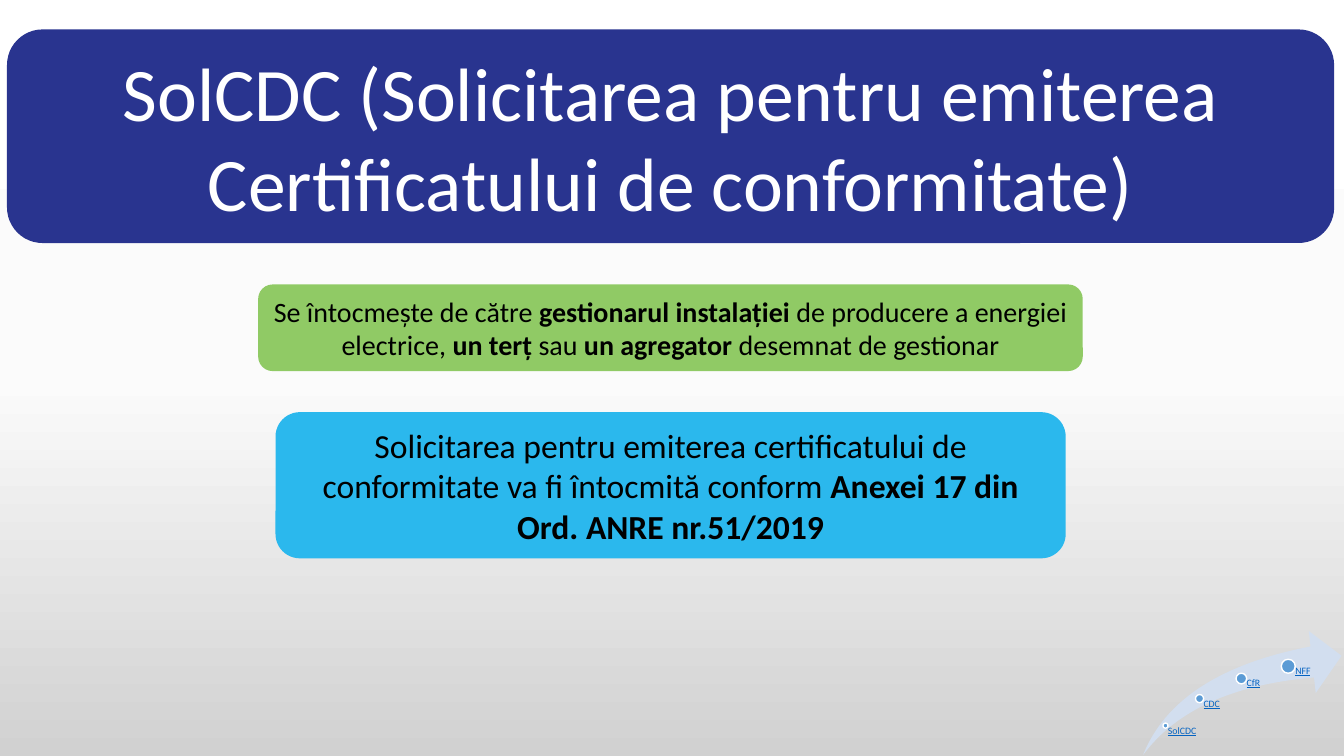
from copy import deepcopy

from pptx import Presentation
from pptx.dml.color import RGBColor
from pptx.enum.shapes import MSO_SHAPE
from pptx.enum.text import MSO_ANCHOR, MSO_AUTO_SIZE, PP_ALIGN
from pptx.util import Pt

COLORS = {
    "white": "FFFFFF", "pale": "FBFBFB", "gray": "D1D1D1", "black": "000000",
    "navy": "29348F", "sky": "2BB8ED", "green": "90CA65",
    "swoosh": "D2DEEF", "dot": "5B9BD5", "link": "0563C1",
}


class Deck:
    font = "Calibri"

    def __init__(self, wide, high):
        self.prs = Presentation()
        self.prs.slide_width, self.prs.slide_height = Pt(wide), Pt(high)
        self.slide = self.prs.slides.add_slide(self.prs.slide_layouts[6])

    def color(self, name):
        return RGBColor.from_string(COLORS[name])

    def backdrop(self, names):
        fill = self.slide.background.fill
        fill.gradient()
        fill.gradient_angle = 270
        first = fill.gradient_stops[0]._gs
        first.addnext(deepcopy(first))
        for i, (stop, name) in enumerate(zip(fill.gradient_stops, names)):
            stop.position = i / (len(names) - 1)
            stop.color.rgb = self.color(name)

    def shape(self, kind, box, fill, line=None, home=None):
        home = home or self.slide
        item = home.shapes.add_shape(kind, *map(Pt, box))
        item.shadow.inherit = False
        item.fill.solid()
        item.fill.fore_color.rgb = self.color(fill)
        if line:
            item.line.color.rgb = self.color(line)
            item.line.width = Pt(1)
        else:
            item.line.fill.background()
        return item

    def style(self, run, size, color):
        run.font.name = self.font
        run.font.size = Pt(size)
        run.font.color.rgb = self.color(color)

    def panel(self, box, fill, size, color, parts):
        """Rounded box; every second part of the text is bold."""
        frame = self.shape(MSO_SHAPE.ROUNDED_RECTANGLE, box, fill).text_frame
        frame.word_wrap = True
        frame.auto_size = MSO_AUTO_SIZE.SHAPE_TO_FIT_TEXT
        frame.vertical_anchor = MSO_ANCHOR.MIDDLE
        para = frame.paragraphs[0]
        para.alignment = PP_ALIGN.CENTER
        for i, part in enumerate(parts):
            run = para.add_run()
            run.text = part
            self.style(run, size, color)
            run.font.bold = i % 2 == 1

    def label(self, box, inset, text, home):
        frame = home.shapes.add_textbox(*map(Pt, box)).text_frame
        frame.word_wrap = True
        frame.margin_left = Pt(inset)
        frame.margin_top = frame.margin_right = frame.margin_bottom = 0
        frame.text = text
        para = frame.paragraphs[0]
        para.line_spacing = 0.9
        run = para.runs[0]
        self.style(run, 7, "link")
        run.font.underline = True

    def path_steps(self, box, steps):
        """Swoosh arrow with a dot and a label at each step."""
        group = self.slide.shapes.add_group_shape()
        arrow = self.shape(MSO_SHAPE.SWOOSH_ARROW, box, "swoosh", home=group)
        arrow.adjustments[0] = arrow.adjustments[1] = 0.25
        base = box[1] + box[3]
        for text, x, y, size, wide in steps:
            half = size / 2
            self.shape(MSO_SHAPE.OVAL, (x - half, y - half, size, size),
                       "dot", "white", group)
            self.label((x, y, wide, base - y), half, text, group)


def main():
    deck = Deck(960, 540)
    deck.backdrop(["white", "pale", "gray"])

    # Title and the two statements
    deck.panel((5, 21, 948, 152.6), "navy", 54, "white",
               ["SolCDC (Solicitarea pentru emiterea Certificatului de conformitate)"])
    deck.panel((196.8, 294.4, 564.4, 104.4), "sky", 24, "black",
               ["Solicitarea pentru emiterea certificatului de conformitate "
                "va fi întocmită conform ",
                "Anexei 17 din Ord. ANRE nr.51/2019"])
    deck.panel((184.4, 203.2, 589, 61.9), "green", 20, "black",
               ["Se întocmește de către ", "gestionarul instalației ",
                "de producere a energiei electrice, ", "un terț ",
                "sau ", "un agregator ", "desemnat de gestionar"])

    # Process path: label, dot centre, dot size, label width
    deck.path_steps((816.5, 450.7, 141.8, 88.6), [
        ("SolCDC", 832.5, 518.3, 3.6, 24.5),
        ("CDC", 856.8, 499, 5.8, 29.5),
        ("CfR", 886.7, 484.7, 7.6, 29.5),
        ("NFF", 920.2, 475.9, 10, 29.5),
    ])

    deck.prs.save("out.pptx")


if __name__ == "__main__":
    main()
